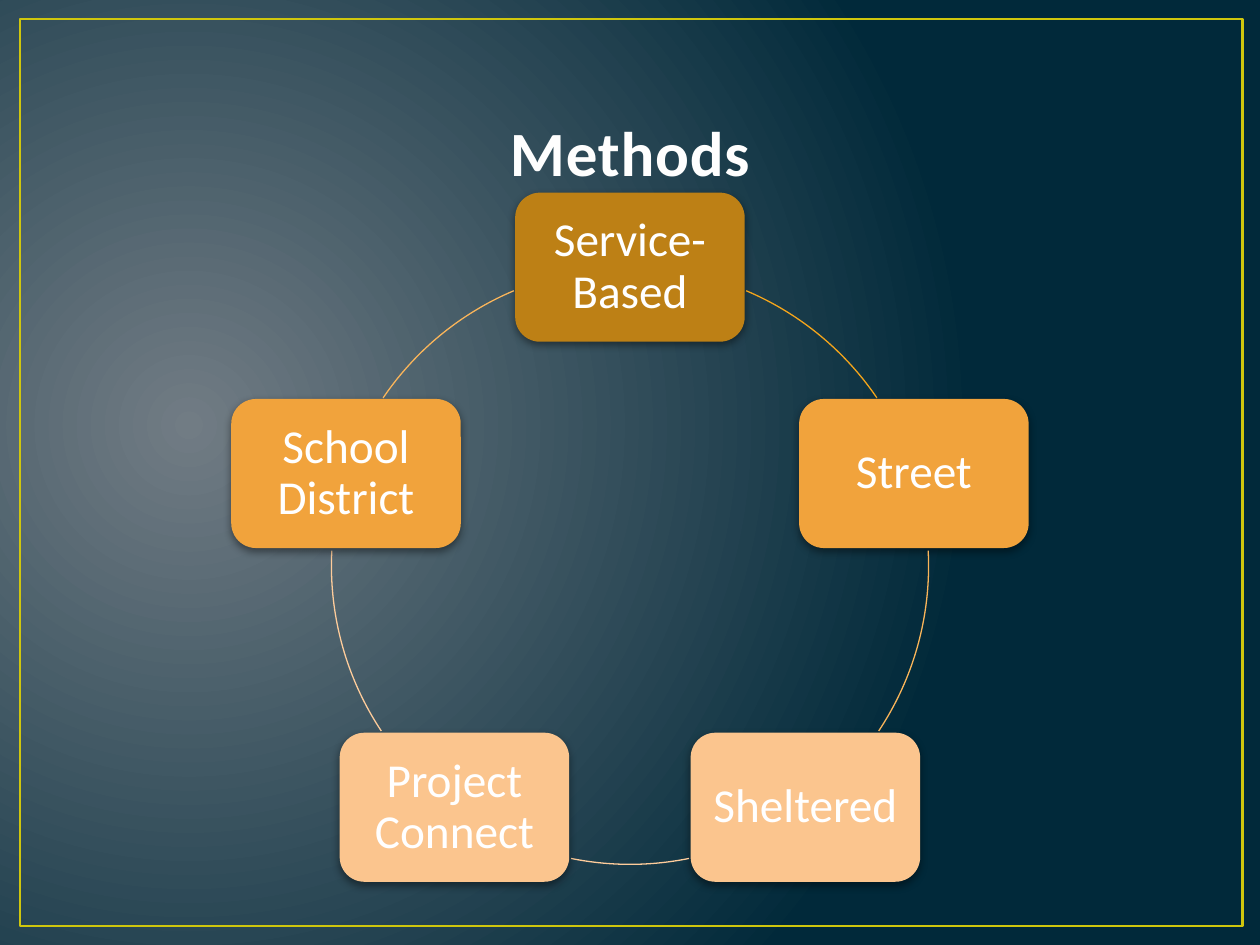
import math
from dataclasses import dataclass

from lxml import etree
from pptx import Presentation
from pptx.dml import color
from pptx.enum import shapes, text
from pptx.oxml import ns
from pptx.util import Pt


@dataclass(frozen=True)
class Theme:
    font: str = "Calibri"
    title_size: float = 36
    box_size: float = 27
    title: str = "FEFEFE"
    title_outline: str = "384F55"
    box_text: str = "FFFFFF"
    frame: str = "CFC60D"
    glow: str = "717C84"
    night: str = "01293A"
    shadow: str = "000000"


THEME = Theme()
CENTER_X, CENTER_Y, RADIUS = 360, 323.3, 170.6
BOX_W, BOX_H = 131.2, 85.2
BOX_INSET = 7.5  # the rounded corners add about 4 points more

# label, box fill, colour of the arc that follows, arc start and end in degrees
METHODS = [
    ("Service-Based", "BD8015", "F4A51B", 292.9, 325.8),
    ("Street", "F1A33C", "FAB55A", 357.1, 33.6),
    ("Sheltered", "FBC58E", "FECC9B", 78.6, 101.4),
    ("Project Connect", "FBC58E", "FECC9B", 146.4, 182.9),
    ("School District", "F1A33C", "FAB55A", 214.2, 247.1),
]


def rgb(value):
    return color.RGBColor.from_string(value)


def add_xml(parent, tag, **attrs):
    return etree.SubElement(parent, ns.qn(tag), {k: str(v) for k, v in attrs.items()})


def set_background(s):
    """Fill the slide with a circular glow left of the middle."""
    fill = s.background.fill
    fill.gradient()
    for stop, value in zip(fill.gradient_stops, (THEME.glow, THEME.night)):
        stop.color.rgb = rgb(value)
    grad = next(s.element.iter(ns.qn("a:gradFill")))
    grad.remove(grad.find(ns.qn("a:lin")))
    circle = add_xml(grad, "a:path", path="circle")
    add_xml(circle, "a:fillToRect", l=15000, t=50000, r=85000, b=60000)


def add_shape(s, kind, x, y, w, h, fill=None, line=None, width=0.75):
    sp = s.shapes.add_shape(kind, Pt(x), Pt(y), Pt(w), Pt(h))
    sp.shadow.inherit = False
    if fill:
        sp.fill.solid()
        sp.fill.fore_color.rgb = rgb(fill)
    else:
        sp.fill.background()
    if line:
        sp.line.color.rgb = rgb(line)
        sp.line.width = Pt(width)
    else:
        sp.line.fill.background()
    return sp


def add_soft_shadow(sp):
    effects = sp.element.spPr.find(ns.qn("a:effectLst"))
    shadow = add_xml(effects, "a:outerShdw", blurRad=Pt(5), dist=Pt(2),
                     dir=90 * 60000, algn="ctr", rotWithShape=0)
    tone = add_xml(shadow, "a:srgbClr", val=THEME.shadow)
    add_xml(tone, "a:alpha", val=43000)


def set_text(sp, words, size, value, anchor):
    tf = sp.text_frame
    tf.text = words
    tf.word_wrap = True
    tf.vertical_anchor = anchor
    p = tf.paragraphs[0]
    p.alignment = text.PP_ALIGN.CENTER
    r = p.runs[0]
    r.font.name = THEME.font
    r.font.size = Pt(size)
    r.font.color.rgb = rgb(value)
    return p


def add_title(s, words):
    sp = s.shapes.add_textbox(Pt(36), Pt(21.6), Pt(648), Pt(90))
    p = set_text(sp, words, THEME.title_size, THEME.title, text.MSO_ANCHOR.BOTTOM)
    p.runs[0].font.bold = True
    props = next(sp.element.iter(ns.qn("a:rPr")))
    props.set("spc", "50")
    outline = add_xml(props, "a:ln", w=Pt(1.05))
    add_xml(add_xml(outline, "a:solidFill"), "a:srgbClr", val=THEME.title_outline)
    props.insert(0, outline)


def add_method(s, label, fill, angle):
    """Place a box on the ring at the given angle in degrees."""
    x = CENTER_X + RADIUS * math.cos(math.radians(angle)) - BOX_W / 2
    y = CENTER_Y + RADIUS * math.sin(math.radians(angle)) - BOX_H / 2
    sp = add_shape(s, shapes.MSO_SHAPE.ROUNDED_RECTANGLE, x, y, BOX_W, BOX_H, fill)
    add_soft_shadow(sp)
    p = set_text(sp, label, THEME.box_size, THEME.box_text, text.MSO_ANCHOR.MIDDLE)
    p.line_spacing = 0.9
    tf = sp.text_frame
    tf.margin_left = tf.margin_right = Pt(BOX_INSET)
    tf.margin_top = tf.margin_bottom = Pt(BOX_INSET)


def add_arc(s, line, start, end):
    sp = add_shape(s, shapes.MSO_SHAPE.ARC, CENTER_X - RADIUS, CENTER_Y - RADIUS,
                   2 * RADIUS, 2 * RADIUS, line=line)
    for i, angle in enumerate((start, end)):
        sp.adjustments[i] = angle * 0.6  # 60000 units a degree, scaled by 100000


def main():
    prs = Presentation()
    prs.slide_width, prs.slide_height = Pt(720), Pt(540)
    s = prs.slides.add_slide(prs.slide_layouts[6])
    set_background(s)
    add_shape(s, shapes.MSO_SHAPE.RECTANGLE, 11.5, 10.8, 698.4, 518.4,
              line=THEME.frame, width=1.5)
    add_title(s, "Methods")
    for i, (label, fill, line, start, end) in enumerate(METHODS):
        add_method(s, label, fill, -90 + i * 360 / len(METHODS))
        add_arc(s, line, start, end)
    prs.save("out.pptx")


if __name__ == "__main__":
    main()
